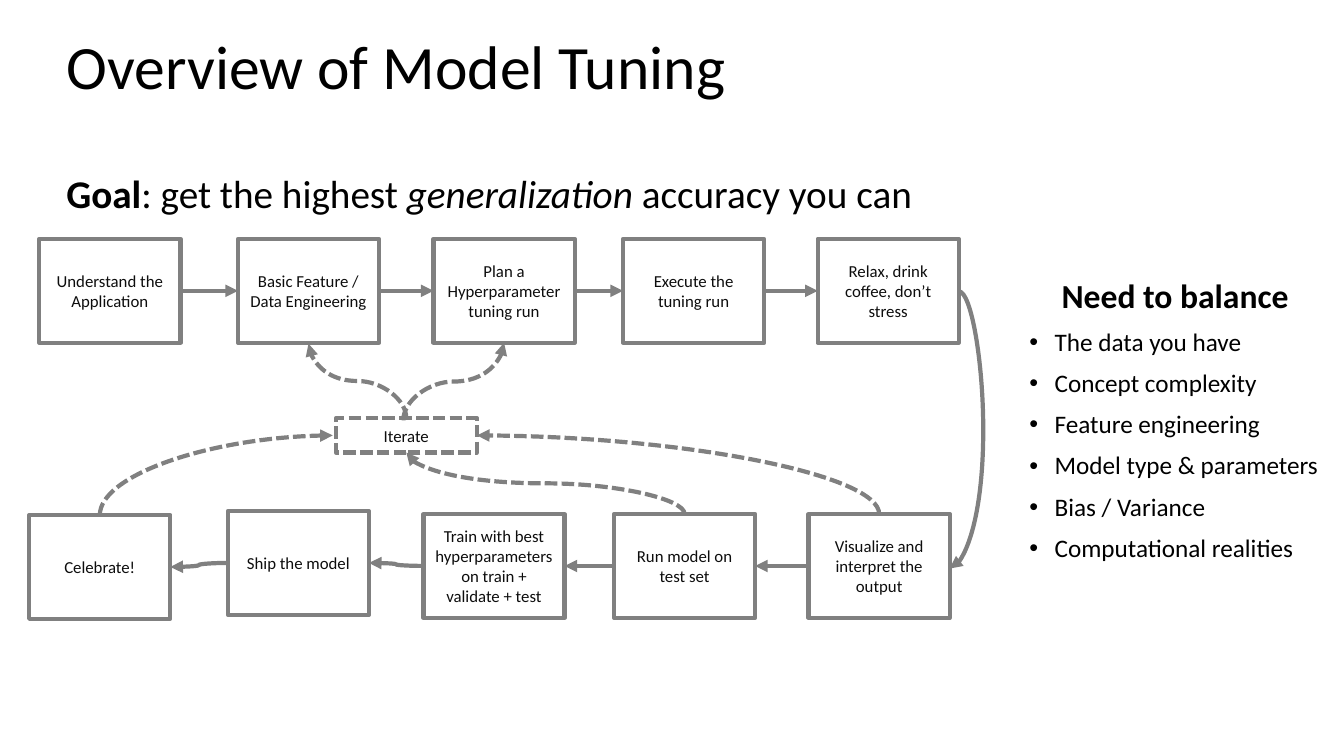
from lxml import etree
from pptx import Presentation
from pptx import util as u
from pptx.dml.color import RGBColor
from pptx.enum import dml, shapes, text
from pptx.oxml.ns import qn

GREY, INK, BLACK = "808080", "0D0D0D", "000000"


def paint(fmt, color):
    """Give a line or font a solid colour."""
    fmt.fill.solid()
    fmt.fill.fore_color.rgb = RGBColor.from_string(color)


def arrow(x1, y1, x2, y2, dash=False):
    """Draw a grey curved arrow."""
    c = slide.shapes.add_connector(
        shapes.MSO_CONNECTOR.CURVE, *[u.Inches(v) for v in (x1, y1, x2, y2)])
    paint(c.line, GREY)
    c.line.width = u.Pt(3)
    if dash:
        c.line.dash_style = dml.MSO_LINE.SQUARE_DOT
    props = c.element.spPr
    etree.SubElement(props.find(qn("a:ln")), qn("a:tailEnd"), type="triangle")
    etree.SubElement(props, qn("a:effectLst"))
    return c


prs = Presentation()
prs.slide_width, prs.slide_height = u.Inches(13.33), u.Inches(7.5)
slide = prs.slides.add_slide(prs.slide_layouts[1])

# Title
title = slide.shapes.title
title.left, title.top = u.Inches(0.56), u.Inches(0.17)
title.width, title.height = u.Inches(11.5), u.Inches(1.03)
title.text_frame.text = "Overview of Model Tuning"
title.text_frame.vertical_anchor = text.MSO_ANCHOR.MIDDLE
para = title.text_frame.paragraphs[0]
para.alignment = text.PP_ALIGN.LEFT
para.line_spacing = 0.9
para.font.name, para.font.size = "Calibri", u.Pt(44)
paint(para.font, BLACK)

# Goal line
goal = slide.shapes.add_textbox(
    u.Inches(0.56), u.Inches(1.63), u.Inches(8.61), u.Inches(0.57))
goal.text_frame.word_wrap = True
para = goal.text_frame.paragraphs[0]
para.font.name, para.font.size = "Calibri", u.Pt(28)
paint(para.font, BLACK)
for words, bold, italic in [("Goal", True, False), (": get the highest ", False, False),
                            ("generalization", False, True),
                            (" accuracy you can", False, False)]:
    run = para.add_run()
    run.text = words
    run.font.bold, run.font.italic = bold, italic

# Step boxes: text, left, top, height
steps = [
    ("Understand the Application", 0.39, 2.37, 1.03),
    ("Basic Feature / Data Engineering", 2.36, 2.37, 1.03),
    ("Plan a Hyperparameter tuning run", 4.3, 2.37, 1.03),
    ("Execute the tuning run", 6.18, 2.37, 1.03),
    ("Relax, drink coffee, don’t stress", 8.11, 2.37, 1.03),
    ("Visualize and interpret the output", 8.02, 5.1, 1.03),
    ("Run model on test set", 6.09, 5.1, 1.03),
    ("Train with best hyperparameters on train + validate + test", 4.2, 5.1, 1.03),
    ("Ship the model", 2.26, 5.07, 1.03),
    ("Celebrate!", 0.29, 5.11, 1.03),
    ("Iterate", 3.33, 4.15, 0.34),
]
boxes = []
for words, x, y, high in steps:
    box = slide.shapes.add_shape(
        shapes.MSO_SHAPE.RECTANGLE, u.Inches(x), u.Inches(y), u.Inches(1.4), u.Inches(high))
    box.shadow.inherit = False
    box.fill.background()
    paint(box.line, GREY)
    box.line.width = u.Pt(3)
    frame = box.text_frame
    frame.word_wrap = True
    frame.vertical_anchor = text.MSO_ANCHOR.MIDDLE
    frame.text = words
    para = frame.paragraphs[0]
    para.alignment = text.PP_ALIGN.CENTER
    para.font.name, para.font.size = "Calibri", u.Pt(12)
    paint(para.font, INK)
    boxes.append(box)
boxes[-1].line.dash_style = dml.MSO_LINE.SQUARE_DOT

# Arrows along each row: rightwards on top, leftwards below
for row, start, end in [(boxes[:5], 3, 1), (boxes[5:10], 1, 3)]:
    for here, there in zip(row, row[1:]):
        link = arrow(0, 0, 1, 0)
        link.begin_connect(here, start)
        link.end_connect(there, end)

# Turn from the top row to the bottom row
turn = arrow(9.51, 2.89, 9.42, 5.64)
guides = turn.element.spPr.find(qn("a:prstGeom")).get_or_add_avLst()
etree.SubElement(guides, qn("a:gd"), name="adj1", fmla="val -268800")

# Dashed arrows that leave upwards: drawn sideways, then turned by 270 degrees
for x1, y1, x2, y2, kind in [
    (6.79, 5.1, 4.03, 4.49, "curvedConnector3"),
    (8.72, 5.1, 4.73, 4.32, "curvedConnector2"),
    (0.99, 5.11, 3.3, 4.32, "curvedConnector2"),
    (4, 4.17, 5, 3.4, "curvedConnector3"),
    (4.03, 4.15, 3.06, 3.41, "curvedConnector3"),
]:
    cx, cy = (x1 + x2) / 2, (y1 + y2) / 2
    dx, dy = (y1 - y2) / 2, (x2 - x1) / 2
    loop = arrow(cx - dx, cy - dy, cx + dx, cy + dy, dash=True)
    loop.element.spPr.find(qn("a:xfrm")).set("rot", str(270 * 60000))
    loop.element.spPr.find(qn("a:prstGeom")).set("prst", kind)

# List of things to balance
body = slide.placeholders[1]
body.left, body.top = u.Inches(10.11), u.Inches(2.72)
body.width, body.height = u.Inches(3.09), u.Inches(3.21)
frame = body.text_frame
frame.auto_size = text.MSO_AUTO_SIZE.NONE
frame.text = "\n".join([
    "Need to balance", "The data you have", "Concept complexity", "Feature engineering",
    "Model type & parameters", "Bias / Variance", "Computational realities"])
for i, para in enumerate(frame.paragraphs):
    head = i == 0
    para.line_spacing, para.space_before = 0.9, u.Pt(10)
    para.alignment = text.PP_ALIGN.CENTER if head else text.PP_ALIGN.LEFT
    props = para._p.get_or_add_pPr()
    indent = 0 if head else u.Inches(0.25)
    props.set("marL", str(indent))
    props.set("indent", str(-indent))
    if head:
        etree.SubElement(props, qn("a:buNone"))
    else:
        etree.SubElement(props, qn("a:buFont"), typeface="Arial")
        etree.SubElement(props, qn("a:buChar"), char="•")
    para.font.name, para.font.size = "Calibri", u.Pt(24 if head else 18)
    para.font.bold = head
    paint(para.font, BLACK)

prs.save("out.pptx")
